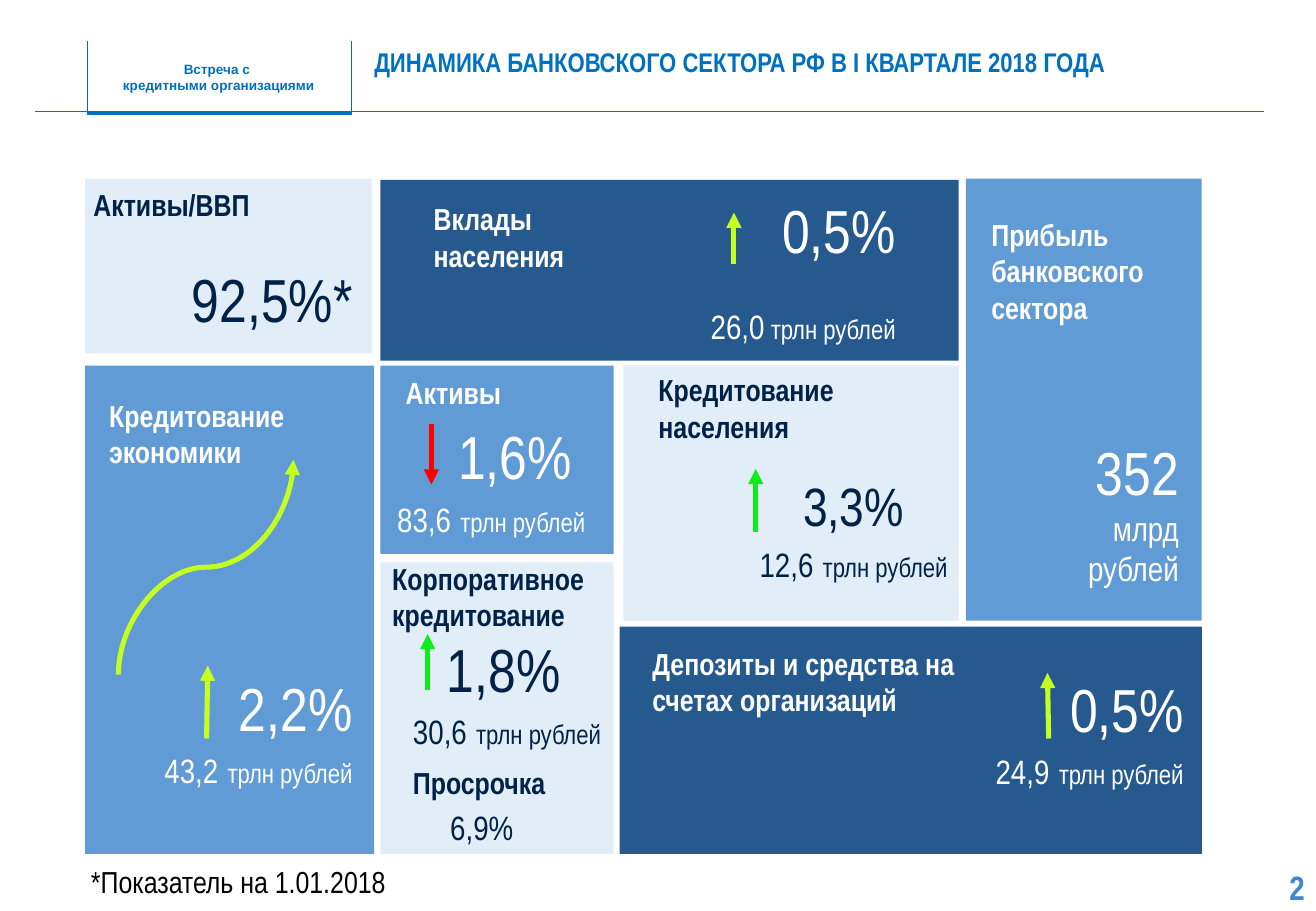
from itertools import cycle

from lxml import etree
from pptx import Presentation
from pptx import util as u
from pptx.dml.color import RGBColor
from pptx.enum import shapes, text
from pptx.oxml.ns import qn

SLIDE_W, SLIDE_H = u.Inches(10.83), u.Inches(7.5)
COLUMN, ROW = SLIDE_W / 108.3, SLIDE_H / 75
FONT = "Arial Narrow"
COLORS = {
    "accent": "0070C0", "number": "4287CD", "white": "FFFFFF", "black": "000000",
    "navy": "002148", "dark": "265A8F", "medium": "619BD5", "pale": "E1EDF7",
    "lime": "C5FF21", "green": "0DED18", "red": "FF0000",
}
ALIGN = {"l": text.PP_ALIGN.LEFT, "c": text.PP_ALIGN.CENTER, "r": text.PP_ALIGN.RIGHT}

TILES = [
    ((79.5, 14.7, 19.4, 36.4), "medium"),
    ((51, 51.6, 47.9, 18.7), "dark"),
    ((51.3, 30.1, 27.6, 21), "pale"),
    ((31.3, 14.8, 47.6, 14.9), "dark"),
    ((31.3, 46.3, 19.2, 24), "pale"),
    ((31.3, 30.1, 19.2, 15.5), "medium"),
    ((7, 30.1, 23.8, 40.2), "medium"),
    ((7, 14.7, 23.6, 14.4), "pale"),
]
HEADINGS = [
    ((80.6, 17.3, 16.4, 10.1), "Прибыль банковского сектора", "white"),
    ((34.7, 16, 14.5, 7.1), "Вклады населения", "white"),
    ((53.2, 30.1, 20.5, 7.1), "Кредитование населения", "navy"),
    ((52.7, 52.6, 28.5, 7.1), "Депозиты и средства на счетах организаций", "white"),
    ((31.3, 45.6, 19.7, 7.1), "Корпоративное кредитование", "navy"),
    ((32.4, 30.3, 14.5, 4.1), "Активы", "white"),
    ((8, 32.2, 19, 7.1), "Кредитование экономики", "white"),
    ((6.7, 14.8, 20.5, 4), "Активы/ВВП", "navy"),
    ((33, 62.4, 19.7, 4), "Просрочка", "navy"),
]
FRAME = [
    ((7.2, 9.2, 2.9, 9.2), 0.25),
    ((29, 9.3, 7.2, 9.3), 2.25),
    ((104, 9.2, 28.8, 9.2), 0.25),
    ((7.2, 9.3, 7.2, 3.4), 0.25),
    ((28.9, 9.3, 28.9, 3.4), 0.25),
]
ARROWS = [
    ((60.4, 21.7, 60.4, 17.5), "lime"),
    ((86.3, 60.8, 86.2, 55.4), "lime"),
    ((17, 60.8, 17.1, 54.8), "lime"),
    ((35.2, 56.8, 35.2, 52.2), "green"),
    ((62.2, 43.8, 62.2, 38.6), "green"),
    ((35.5, 34.9, 35.5, 39.9), "red"),
]


def rgb(name):
    return RGBColor.from_string(COLORS[name])


def place(box):
    return [int(length * unit) for length, unit in zip(box, cycle((COLUMN, ROW)))]


def amount(value):
    return [(value, 20), (" ", 24), ("трлн рублей", 16)]


def fill_text(frame, *paragraphs, size=18, color="navy", bold=False, align="l",
              font=FONT, middle=False, inset=True, wrap=True, gap=0, indent=0):
    frame.word_wrap = wrap
    frame.auto_size = text.MSO_AUTO_SIZE.NONE
    frame.vertical_anchor = text.MSO_ANCHOR.MIDDLE if middle else text.MSO_ANCHOR.TOP
    if not inset:
        frame.margin_left = frame.margin_right = frame.margin_top = frame.margin_bottom = 0
    for index, (runs, side) in enumerate(zip(paragraphs, cycle(align))):
        paragraph = frame.add_paragraph() if index else frame.paragraphs[0]
        paragraph.alignment = ALIGN[side]
        for words, points in ([(runs, size)] if isinstance(runs, str) else runs):
            if words == "\n":
                paragraph.add_line_break()
                continue
            run = paragraph.add_run()
            run.text = words
            run.font.name, run.font.size, run.font.bold = font, u.Pt(points), bold
            run.font.color.rgb = rgb(color)
    if gap:
        paragraph.space_before = u.Pt(gap)
    if indent:
        paragraph._p.get_or_add_pPr().set("marL", str(int(indent * COLUMN)))


def write(slide, box, *paragraphs, **style):
    fill_text(slide.shapes.add_textbox(*place(box)).text_frame, *paragraphs, **style)


def add_tile(slide, box, color):
    tile = slide.shapes.add_shape(shapes.MSO_SHAPE.RECTANGLE, *place(box))
    tile.shadow.inherit = False
    tile.fill.solid()
    tile.fill.fore_color.rgb = rgb(color)
    tile.line.fill.background()


def add_line(slide, ends, color, width, arrow=False, kind=shapes.MSO_CONNECTOR.STRAIGHT):
    line = slide.shapes.add_connector(kind, *place(ends))
    line.line.color.rgb = rgb(color)
    line.line.width = u.Pt(width)
    properties = line._element.spPr
    if arrow:
        etree.SubElement(properties.find(qn("a:ln")), qn("a:tailEnd"), type="triangle")
    etree.SubElement(properties, qn("a:effectLst"))
    return line


def add_header(slide):
    for ends, width in FRAME:
        add_line(slide, ends, "accent", width)
    write(slide, (7.4, 5, 21.2, 2.7),
          [("Встреча с ", 8), ("\n", 8), ("кредитными организациями", 8)],
          color="accent", bold=True, align="c", font="Arial", middle=True, inset=False)
    title = slide.shapes.title
    title.left, title.top, title.width, title.height = place((30.8, 2.4, 73.5, 5.7))
    fill_text(title.text_frame, "ДИНАМИКА БАНКОВСКОГО СЕКТОРА РФ В I КВАРТАЛЕ 2018 ГОДА",
              size=16, color="accent", bold=True, middle=True, inset=False)
    title.text_frame.paragraphs[0].line_spacing = 0.9


def add_figures(slide):
    write(slide, (14.5, 21.1, 15.8, 7.1), "92,5%*", size=36, align="c")
    write(slide, (36, 65.9, 7.3, 4.4), "6,9%", size=20, align="c", wrap=False)
    write(slide, (7.7, 54.7, 22.3, 11.1), "2,2%", amount("43,2"),
          size=36, color="white", align="r")
    write(slide, (30.5, 51.5, 21.9, 11.1), "1,8%", amount("30,6"),
          size=36, align="cl", indent=2.5)
    write(slide, (31.7, 34, 20.2, 11.1), " 1,6%", amount("83,6"),
          size=36, color="white", align="cl")
    write(slide, (43.9, 15.4, 30.8, 13.8), "0,5%", [("26,0", 20), (" трлн рублей", 16)],
          size=36, color="white", align="r", gap=23.5)
    write(slide, (87, 35.3, 11, 13.8), "352", [("млрд рублей", 20)],
          size=36, color="white", align="r")
    write(slide, (64.4, 54.8, 34, 11.1), "0,5%", amount("24,9"),
          size=36, color="white", align="r")
    write(slide, (57.6, 38.4, 25.3, 10.4), "3,3%", amount("12,6"), size=32, align="c")


def main():
    deck = Presentation()
    deck.slide_width, deck.slide_height = SLIDE_W, SLIDE_H
    slide = deck.slides.add_slide(deck.slide_layouts[5])
    add_header(slide)
    for box, color in TILES:
        add_tile(slide, box, color)
    for box, heading, color in HEADINGS:
        write(slide, box, heading, color=color, bold=True)
    growth = add_line(slide, (25.8, 53.9, 8.1, 39.5), "lime", 3, arrow=True,
                      kind=shapes.MSO_CONNECTOR.CURVE)
    growth._element.spPr.find(qn("a:xfrm")).set("rot", "5400000")
    for ends, color in ARROWS:
        add_line(slide, ends, color, 3, arrow=True)
    add_figures(slide)
    write(slide, (6.5, 70.6, 31.9, 4), "*Показатель на 1.01.2018", color="black")
    write(slide, (106.1, 71, 2.2, 4), "2", size=20, color="number", bold=True,
          middle=True, inset=False)
    deck.save("out.pptx")


if __name__ == "__main__":
    main()
